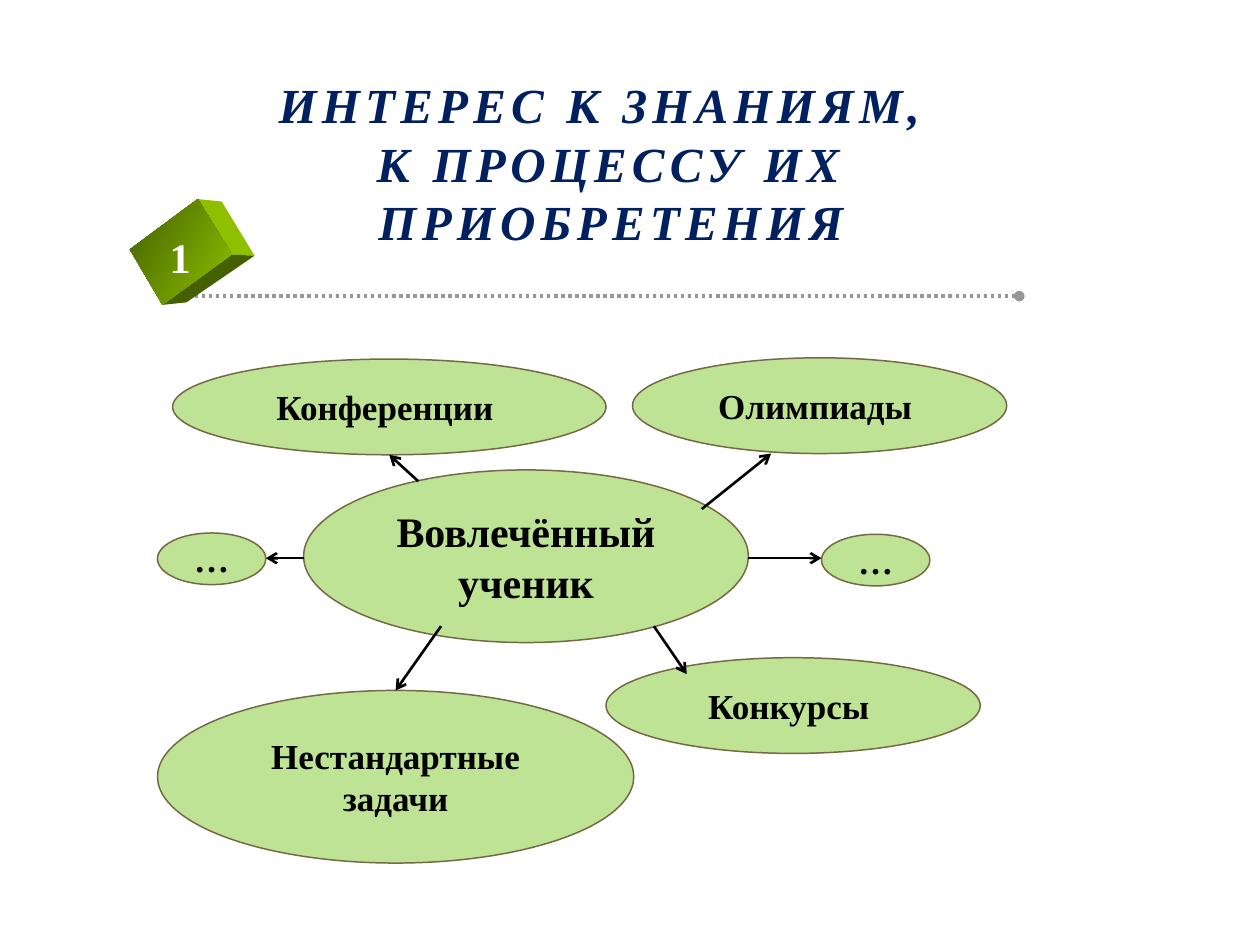
from dataclasses import dataclass
from typing import NamedTuple

from lxml import etree
from pptx import Presentation
from pptx import util as u
from pptx.dml.color import RGBColor
from pptx.enum import dml, shapes, text
from pptx.oxml.ns import qn


@dataclass(frozen=True)
class Theme:
    font: str = "Times New Roman"
    navy: str = "002060"
    black: str = "000000"
    white: str = "FFFFFF"
    gray: str = "969696"
    bubble: str = "BEE395"
    bubble_edge: str = "756944"
    cube_light: str = "8FC000"
    cube_dark: str = "446000"
    title_size: float = 28
    large_size: float = 24
    label_size: float = 20


THEME = Theme()


class Bubble(NamedTuple):
    label: str
    left: float
    top: float
    width: float
    height: float
    size: float = THEME.label_size


class Line(NamedTuple):
    start: tuple[float, float]
    end: tuple[float, float]
    color: str = THEME.black
    width: float = 1.5
    tail: str = "arrow"


class Face(NamedTuple):
    points: list[tuple[float, float]]
    color: str


BUBBLES = [
    Bubble("Нестандартные задачи", 1.25, 5.48, 3.78, 1.37),
    Bubble("Вовлечённый ученик", 2.41, 3.73, 3.53, 1.37, THEME.large_size),
    Bubble("Олимпиады ", 5.02, 2.84, 2.97, 0.76),
    Bubble("Конкурсы ", 4.81, 5.22, 2.97, 0.76),
    Bubble("Конференции ", 1.37, 2.85, 3.44, 0.76),
    Bubble("…", 1.25, 4.23, 0.86, 0.41),
    Bubble("…", 6.52, 4.24, 0.86, 0.41),
]

ARROWS = [
    Line((3.32, 3.82), (3.09, 3.61)),
    Line((5.57, 4.04), (6.12, 3.6)),
    Line((3.5, 4.97), (3.14, 5.48)),
    Line((5.19, 4.97), (5.45, 5.35)),
    Line((2.41, 4.43), (2.11, 4.43)),
    Line((5.94, 4.43), (6.52, 4.43)),
]

# Corners of the cube's front face, then of its far edge
LEFT, TOP, RIGHT, BOTTOM = (1.03, 1.98), (1.57, 1.58), (1.84, 2.02), (1.29, 2.42)
FAR_TOP, FAR_RIGHT, FAR_BOTTOM = (1.76, 1.6), (2.02, 2.03), (1.48, 2.4)
FRONT = Face([LEFT, TOP, RIGHT, BOTTOM], THEME.cube_dark)
SIDES = [
    Face([TOP, FAR_TOP, FAR_RIGHT, RIGHT], THEME.cube_light),
    Face([BOTTOM, RIGHT, FAR_RIGHT, FAR_BOTTOM], THEME.cube_dark),
]


def rgb(color: str) -> RGBColor:
    return RGBColor.from_string(color)


def write(frame, words: str, size: float, color: str, **formats):
    """Fill the frame with one bold centred paragraph and return its runs."""
    para = frame.paragraphs[0]
    para.text = words
    para.alignment = text.PP_ALIGN.CENTER
    values = {"name": THEME.font, "size": u.Pt(size), "bold": True, **formats}
    for span in para.runs:
        for name, value in values.items():
            setattr(span.font, name, value)
        span.font.color.rgb = rgb(color)
    return para.runs


def add_text(page, words: str, box: tuple, size: float, color: str, wrap: bool,
             anchor=text.MSO_ANCHOR.TOP, **formats):
    frame = page.shapes.add_textbox(*map(u.Inches, box)).text_frame
    frame.word_wrap = wrap
    frame.vertical_anchor = anchor
    return write(frame, words, size, color, **formats)


def add_line(page, line: Line):
    connector = page.shapes.add_connector(
        shapes.MSO_CONNECTOR.STRAIGHT, *map(u.Inches, line.start + line.end))
    connector.line.color.rgb = rgb(line.color)
    connector.line.width = u.Pt(line.width)
    if line.tail == "oval":
        connector.line.dash_style = dml.MSO_LINE.ROUND_DOT
    properties = connector._element.spPr
    etree.SubElement(properties.find(qn("a:ln")), qn("a:tailEnd"), type=line.tail)
    etree.SubElement(properties, qn("a:effectLst"))


def add_bubble(page, bubble: Bubble):
    box = (bubble.left, bubble.top, bubble.width, bubble.height)
    shape = page.shapes.add_shape(shapes.MSO_SHAPE.OVAL, *map(u.Inches, box))
    shape.shadow.inherit = False
    shape.fill.solid()
    shape.fill.fore_color.rgb = rgb(THEME.bubble)
    shape.line.color.rgb = rgb(THEME.bubble_edge)
    shape.line.width = u.Pt(0.85)
    shape.text_frame.word_wrap = True
    shape.text_frame.vertical_anchor = text.MSO_ANCHOR.MIDDLE
    write(shape.text_frame, bubble.label, bubble.size, THEME.black)


def add_face(page, face: Face):
    start, *others = [(u.Inches(x), u.Inches(y)) for x, y in face.points]
    builder = page.shapes.build_freeform(*start)
    builder.add_line_segments(others, close=True)
    shape = builder.convert_to_shape()
    shape.shadow.inherit = False
    shape.line.fill.background()
    shape.fill.solid()
    shape.fill.fore_color.rgb = rgb(face.color)
    return shape


def main():
    deck = Presentation()
    deck.slide_width, deck.slide_height = u.Inches(10), u.Inches(7.5)
    page = deck.slides.add_slide(deck.slide_layouts[6])

    # Title with wide letter spacing
    title = add_text(page, "ИНТЕРЕС К ЗНАНИЯМ, \vК ПРОЦЕССУ ИХ ПРИОБРЕТЕНИЯ",
                     (1.43, 0.13, 6.84, 1.91), THEME.title_size, THEME.navy, True,
                     text.MSO_ANCHOR.BOTTOM, italic=True)
    for span in title:
        span.font._element.set("spc", "300")

    # Dotted rule and numbered cube
    add_line(page, Line((1.49, 2.35), (8.09, 2.35), THEME.gray, 2, "oval"))
    for side in SIDES:
        add_face(page, side)
    front = add_face(page, FRONT)
    front.fill.gradient()
    front.fill.gradient_angle = 330
    for stop, color in zip(front.fill.gradient_stops,
                           (THEME.cube_dark, THEME.cube_light)):
        stop.color.rgb = rgb(color)
    add_text(page, "1", (1.19, 1.79, 0.48, 0.5), THEME.large_size, THEME.white, False)

    # Mind map
    for bubble in BUBBLES:
        add_bubble(page, bubble)
    for arrow in ARROWS:
        add_line(page, arrow)

    deck.save("out.pptx")


if __name__ == "__main__":
    main()
